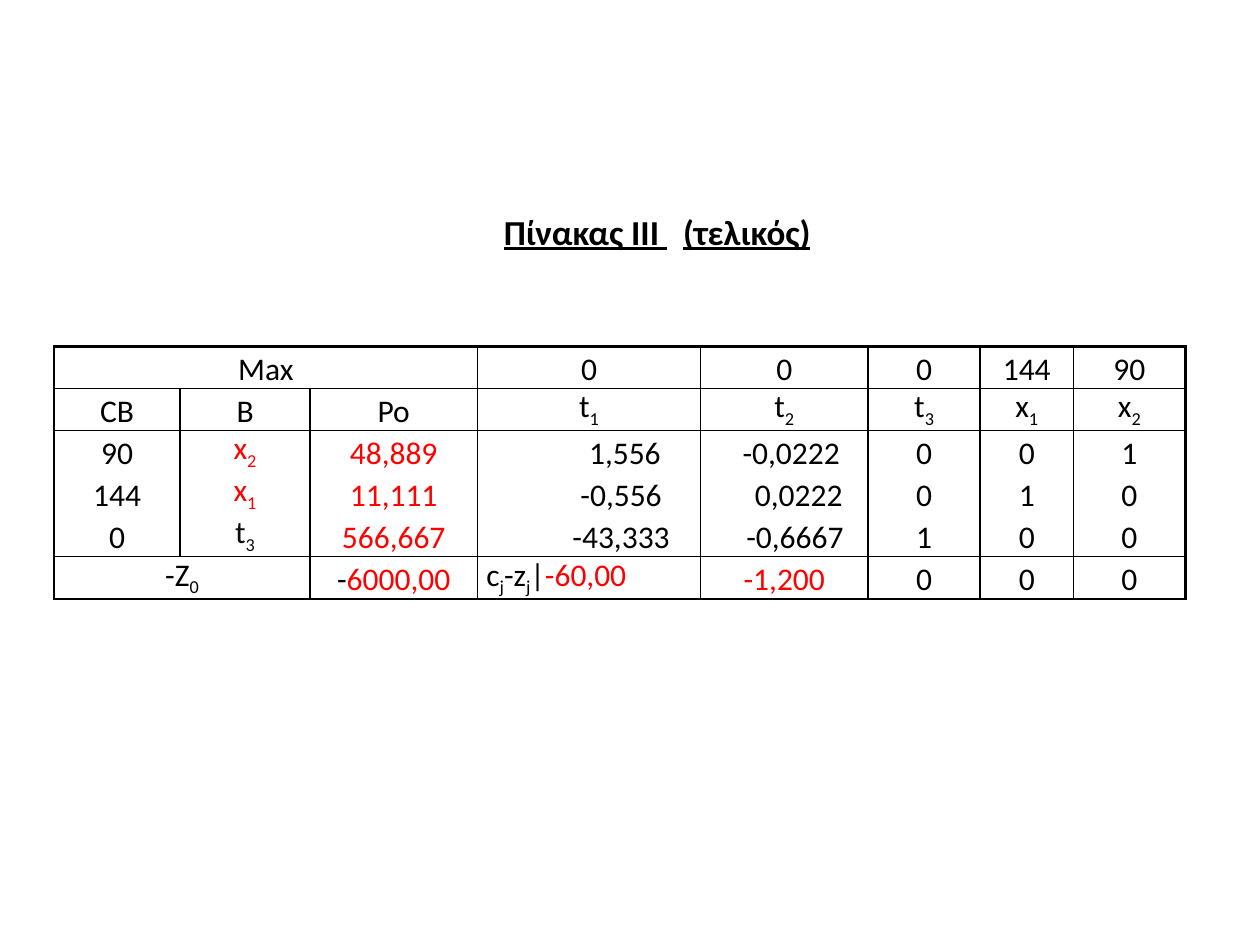
"""Build the slide with the final simplex tableau."""
from lxml import etree
from pptx import Presentation
from pptx.dml.color import RGBColor
from pptx.enum import text
from pptx.oxml import ns
from pptx.util import Inches, Pt

BLACK = "000000"
MARKED = {"*": "FF0000", "^": "0D0D0D"}


def add_run(paragraph, words, size, color=BLACK, **styles):
    run = paragraph.add_run()
    run.text = words
    formats = {"name": "Calibri", "size": Pt(size), **styles}
    for key, value in formats.items():
        setattr(run.font, key, value)
    run.font.color.rgb = RGBColor.from_string(color)
    return run.font._element


def add_border(cell, side, points):
    line = etree.SubElement(cell._tc.get_or_add_tcPr(), ns.qn(f"a:ln{side}"), w=str(Pt(points)))
    fill = etree.SubElement(line, ns.qn("a:solidFill"))
    etree.SubElement(fill, ns.qn("a:srgbClr"), val=BLACK)


# Runs are parted by spaces; * and ^ choose a colour, _ lowers a run.
tableau = [
    [["Max"], [], [], ["0"], ["0"], ["0"], ["144"], ["90"]],
    [["CB"], ["B"], ["Po"], ["t _1"], ["t _2"], ["t _3"], ["x _1"], ["x _2"]],
    [["90", "144", "0"], ["*x *_2", "*x *_1", "^t ^_3"],
     ["*48,889", "*11,111", "*566,667"], ["1,556", "-0,556", "-43,333"],
     ["-0,0222", "0,0222", "-0,6667"], ["0", "0", "1"], ["0", "1", "0"], ["1", "0", "0"]],
    [["-Z _0"], [], ["- *6000,00"], ["c _j -z _j | *-60,00"], ["*-1,200"], ["0"], ["0"], ["0"]],
]
indents = {"1,556": 0.57, "-0,556": 0.51, "-43,333": 0.51,
           "-0,0222": 0.11, "0,0222": 0.23, "-0,6667": 0.17}
widths = [1, 1.03, 1.33, 1.77, 1.33, 0.89, 0.74, 0.89]
line_height = Pt(24)

prs = Presentation()
prs.slide_width, prs.slide_height = Inches(10), Inches(7.5)
slide = prs.slides.add_slide(prs.slide_layouts[6])

grid = slide.shapes.add_table(len(tableau), len(widths), Inches(0.43), Inches(2.75),
                              Inches(sum(widths)), Inches(2)).table
grid.first_row = grid.horz_banding = False
for column, width in zip(grid.columns, widths):
    column.width = Inches(width)
last_row, last_column = len(tableau) - 1, len(widths) - 1

for r, entries in enumerate(tableau):
    grid.rows[r].height = line_height * max(map(len, entries))
    for c, lines in enumerate(entries):
        cell = grid.cell(r, c)
        for side, outer in {"L": c == 0, "R": c == last_column,
                            "T": r == 0, "B": r == last_row}.items():
            add_border(cell, side, 1.5 if outer else 1)
        cell.fill.background()
        cell.margin_left = cell.margin_right = Inches(0.07)
        cell.margin_top = cell.margin_bottom = 0
        for i, line in enumerate(lines):
            frame = cell.text_frame
            paragraph = frame.add_paragraph() if i else frame.paragraphs[0]
            paragraph.line_spacing = line_height
            reduced_costs = line.startswith("c _j")
            paragraph.alignment = text.PP_ALIGN.JUSTIFY if reduced_costs else text.PP_ALIGN.CENTER
            if line in indents:
                paragraph._p.get_or_add_pPr().set("marL", str(Inches(indents[line])))
            for token in line.split():
                words = token.lstrip("*^")
                props = add_run(paragraph, words.lstrip("_"), 18, MARKED.get(token[0], BLACK))
                if words.startswith("_"):
                    props.set("baseline", "-25000")

grid.cell(0, 0).merge(grid.cell(0, 2))
grid.cell(last_row, 0).merge(grid.cell(last_row, 1))

heading = slide.shapes.add_textbox(Inches(3.9), Inches(1.62), Inches(2.66), Inches(0.77)).text_frame
heading.word_wrap = False
heading.vertical_anchor = text.MSO_ANCHOR.TOP
for words, spacing in (("Πίνακας III", 0), (" ", 900), ("(τελικός)", 0)):
    props = add_run(heading.paragraphs[0], words, 20, bold=True, underline=True)
    props.set("spc", str(spacing))

prs.save("out.pptx")
